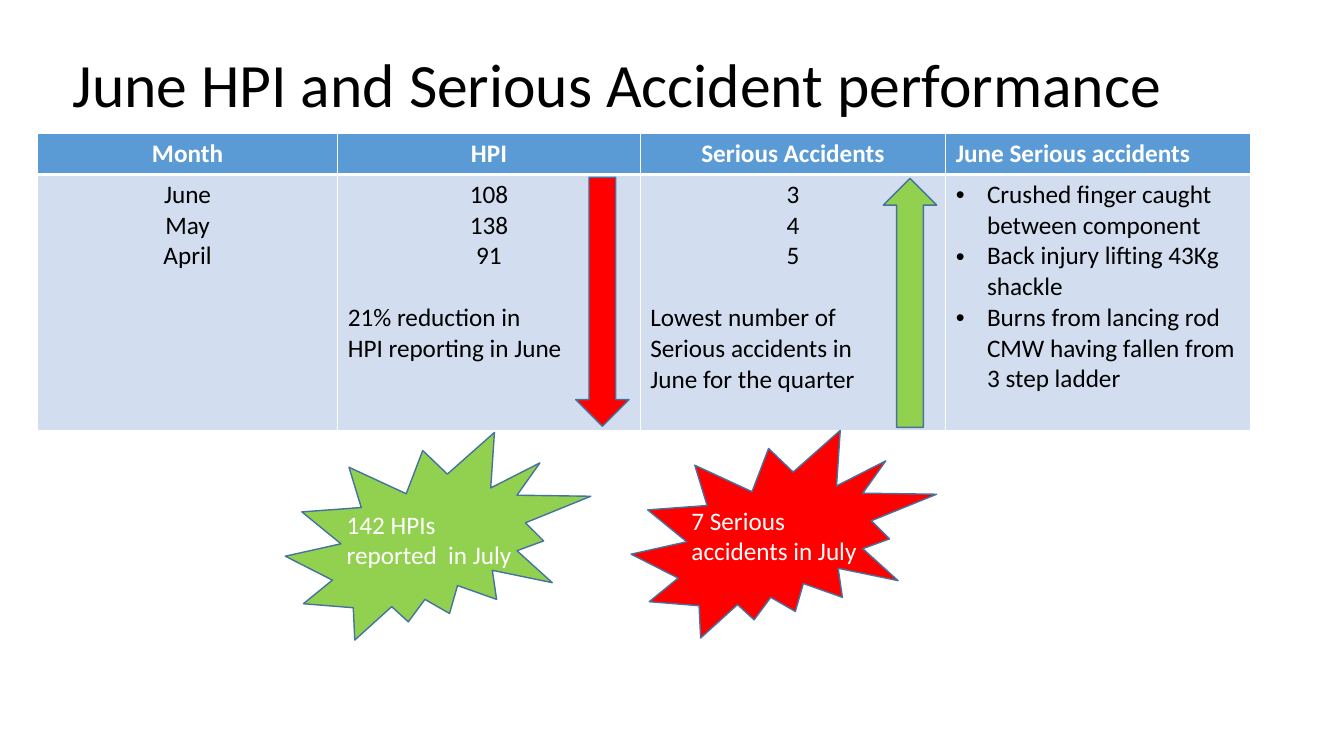
from lxml import etree
from pptx import Presentation
from pptx.dml.color import RGBColor
from pptx.enum import shapes, text
from pptx.oxml import ns
from pptx.util import Inches, Pt

COLORS = {"black": "000000", "white": "FFFFFF", "header": "5B9BD5", "body": "D2DEEF",
          "red": "FF0000", "green": "92D050", "outline": "43739E"}


def color(name):
    return RGBColor.from_string(COLORS[name])


def style(para, size, name, bold=False):
    for span in para.runs:
        span.font.name = "Calibri"
        span.font.size = Pt(size)
        span.font.bold = bold
        span.font.color.rgb = color(name)


deck = Presentation()
deck.slide_width, deck.slide_height = Inches(13.33), Inches(7.5)
page = deck.slides.add_slide(deck.slide_layouts[6])

# Title
title = page.shapes.add_textbox(Inches(0.62), Inches(0.4), Inches(12.05), Inches(0.93))
frame = title.text_frame
frame.word_wrap = True
frame.vertical_anchor = text.MSO_ANCHOR.MIDDLE
frame.text = "June HPI and Serious Accident performance"
frame.paragraphs[0].line_spacing = 0.9
style(frame.paragraphs[0], 44, "black")

# Table: each column has a heading, centred values and left-aligned notes
columns = [
    (2.98, "Month", ["June", "May", "April"], []),
    (3.0, "HPI", ["108", "138", "91"], ["21% reduction in", "HPI reporting in June"]),
    (3.03, "Serious Accidents", ["3", "4", "5"],
     ["Lowest number of", "Serious accidents in", "June for the quarter"]),
    (3.02, "June Serious accidents", [],
     ["Crushed finger caught between component", "Back injury lifting 43Kg shackle",
      "Burns from lancing rod CMW having fallen from 3 step ladder"]),
]
table = page.shapes.add_table(2, len(columns), Inches(0.37), Inches(1.32),
                              Inches(12.03), Inches(2.95)).table
table.rows[0].height, table.rows[1].height = Inches(0.41), Inches(2.54)

for index, (width, heading, values, notes) in enumerate(columns):
    table.columns[index].width = Inches(width)
    header, body = table.cell(0, index), table.cell(1, index)

    # White borders, thicker under the heading
    for cell, fill, thick in ((header, "header", "lnB"), (body, "body", "lnT")):
        properties = cell._tc.get_or_add_tcPr()
        for side in ("lnL", "lnR", "lnT", "lnB"):
            border = etree.SubElement(properties, ns.qn("a:" + side))
            border.set("w", str(Pt(3 if side == thick else 1)))
            paint = etree.SubElement(border, ns.qn("a:solidFill"))
            etree.SubElement(paint, ns.qn("a:srgbClr")).set("val", COLORS["white"])
        cell.fill.solid()
        cell.fill.fore_color.rgb = color(fill)

    header.text_frame.text = heading
    style(header.text_frame.paragraphs[0], 18, "white", True)
    if values:
        header.text_frame.paragraphs[0].alignment = text.PP_ALIGN.CENTER

    body.text_frame.text = "\n".join(values + notes)
    for row, para in enumerate(body.text_frame.paragraphs):
        if row < len(values):
            para.alignment = text.PP_ALIGN.CENTER
        elif not values:
            layout = para._p.get_or_add_pPr()
            layout.set("marL", str(Inches(0.31)))
            layout.set("indent", str(Inches(-0.31)))
            etree.SubElement(layout, ns.qn("a:buFont")).set("typeface", "Arial")
            etree.SubElement(layout, ns.qn("a:buChar")).set("char", "•")
        elif row == len(values):
            para.space_before = Pt(22)
        style(para, 18, "black")

# Trend arrows and July bursts
ARROW, BURST = shapes.MSO_SHAPE.DOWN_ARROW, shapes.MSO_SHAPE.EXPLOSION2
for kind, left, top, width, height, fill, rotation in (
        (ARROW, 5.71, 1.76, 0.53, 2.47, "red", 0),
        (ARROW, 8.76, 1.77, 0.53, 2.47, "green", 180),
        (BURST, 2.83, 4.29, 3.03, 2.06, "green", 0),
        (BURST, 6.26, 4.27, 3.03, 2.06, "red", 0)):
    shape = page.shapes.add_shape(kind, Inches(left), Inches(top), Inches(width), Inches(height))
    shape.rotation = rotation
    shape.shadow.inherit = False
    shape.fill.solid()
    shape.fill.fore_color.rgb = color(fill)
    shape.line.color.rgb = color("outline")
    shape.line.width = Pt(1)

# Burst captions
for left, top, width, caption in ((3.34, 5, 1.86, "142 HPIs reported  in July"),
                                  (6.76, 4.96, 2, "7 Serious accidents in July")):
    box = page.shapes.add_textbox(Inches(left), Inches(top), Inches(width), Inches(0.71))
    box.text_frame.word_wrap = True
    box.text_frame.auto_size = text.MSO_AUTO_SIZE.SHAPE_TO_FIT_TEXT
    box.text_frame.text = caption
    style(box.text_frame.paragraphs[0], 18, "white")

deck.save("out.pptx")
